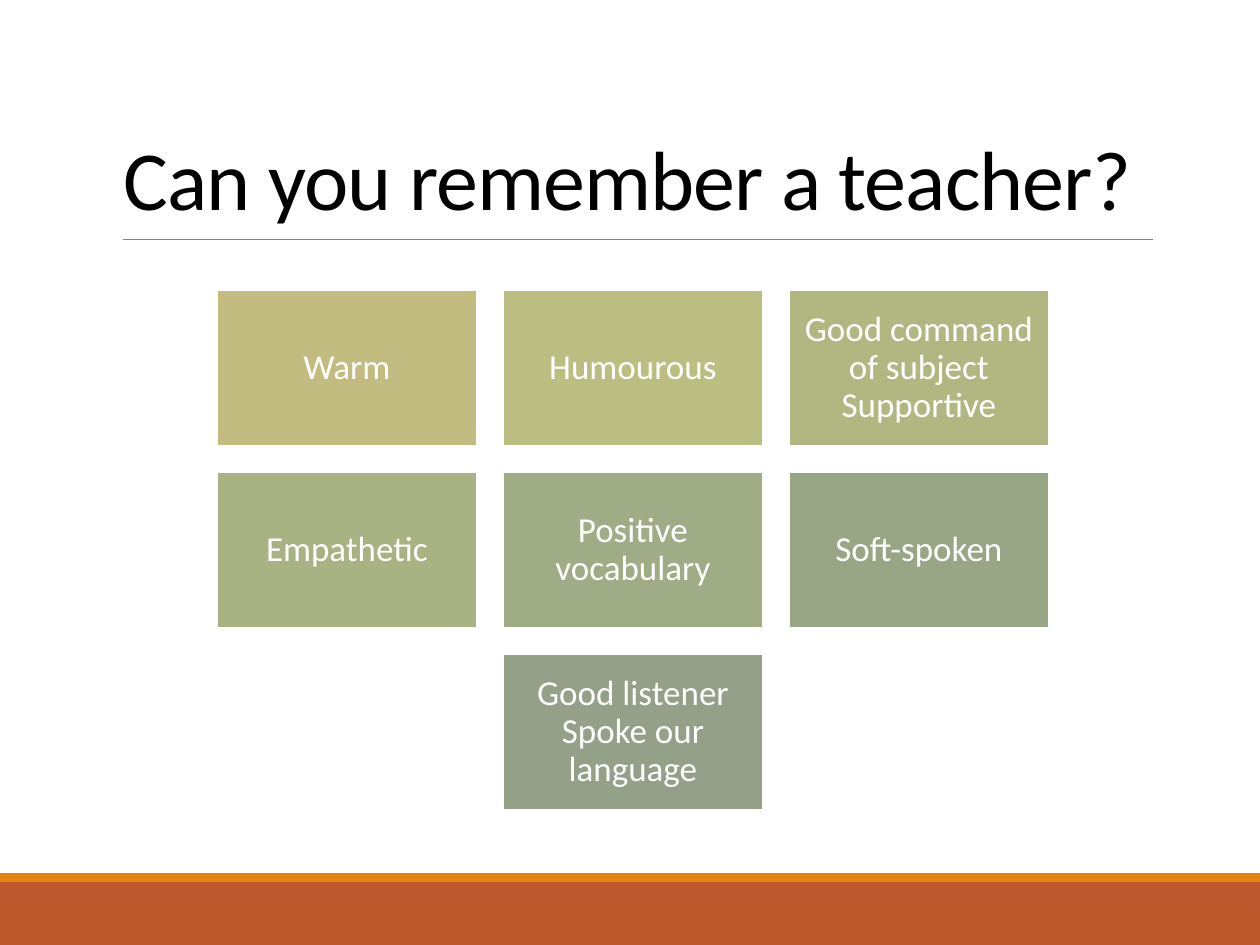
from lxml.etree import SubElement
from pptx import Presentation
from pptx.dml.color import RGBColor
from pptx.enum.shapes import MSO_CONNECTOR, MSO_SHAPE
from pptx.enum.text import MSO_ANCHOR, MSO_AUTO_SIZE, PP_ALIGN
from pptx.oxml.ns import qn
from pptx.util import Pt

FONT = "Calibri"
COLORS = {
    "rust": "BD582C",
    "amber": "E48312",
    "rule": "808080",
    "white": "FFFFFF",
    "black": "000000",
}
TRAITS = [
    ("Warm", "C2BC80", 0, 0),
    ("Humourous", "BCBD81", 0, 1),
    ("Good command of subject Supportive", "B2B782", 0, 2),
    ("Empathetic", "A8B283", 1, 0),
    ("Positive vocabulary", "A0AC85", 1, 1),
    ("Soft-spoken", "99A686", 1, 2),
    ("Good listener Spoke our language", "94A088", 2, 1),
]
LEFT, TOP = 123.8, 165.8
WIDE, HIGH = 149, 89.2
STEP_X, STEP_Y = 163.4, 104


def rgb(code):
    return RGBColor.from_string(code)


def add_text(frame, text, size, color, space):
    para = frame.paragraphs[0]
    para.line_spacing = space
    run = para.add_run()
    run.text = text
    run.font.name = FONT
    run.font.size = Pt(size)
    run.font.color.rgb = rgb(color)
    return para, run


def add_box(slide, left, top, width, height, fill):
    box = slide.shapes.add_shape(
        MSO_SHAPE.RECTANGLE, Pt(left), Pt(top), Pt(width), Pt(height)
    )
    box.shadow.inherit = False
    box.fill.solid()
    box.fill.fore_color.rgb = rgb(fill)
    box.line.fill.background()
    return box


def add_trait(slide, text, fill, row, col):
    box = add_box(
        slide, LEFT + col * STEP_X, TOP + row * STEP_Y, WIDE, HIGH, fill
    )
    box.line.color.rgb = rgb(COLORS["white"])
    box.line.width = Pt(1.25)
    frame = box.text_frame
    frame.word_wrap = True
    frame.vertical_anchor = MSO_ANCHOR.MIDDLE
    frame.margin_left = frame.margin_right = Pt(6)
    frame.margin_top = frame.margin_bottom = Pt(6)
    para, _ = add_text(frame, text, 20, COLORS["white"], 0.9)
    para.alignment = PP_ALIGN.CENTER
    para.space_after = Pt(7)


def add_rule(slide, left, right, y):
    rule = slide.shapes.add_connector(
        MSO_CONNECTOR.STRAIGHT, Pt(left), Pt(y), Pt(right), Pt(y)
    )
    rule.line.color.rgb = rgb(COLORS["rule"])
    rule.line.width = Pt(0.5)
    SubElement(rule._element.spPr, qn("a:effectLst"))


def set_title(slide, text):
    title = slide.shapes.title
    title.left, title.top = Pt(63.4), Pt(19.4)
    title.width, title.height = Pt(594), Pt(114.5)
    frame = title.text_frame
    frame.word_wrap = True
    frame.auto_size = MSO_AUTO_SIZE.NONE
    frame.vertical_anchor = MSO_ANCHOR.BOTTOM
    para, run = add_text(frame, text, 48, COLORS["black"], 0.85)
    para.alignment = PP_ALIGN.LEFT
    run._r.get_or_add_rPr().set("spc", "-50")


def main():
    deck = Presentation()
    deck.slide_width, deck.slide_height = Pt(720), Pt(540)
    slide = deck.slides.add_slide(deck.slide_layouts[5])
    add_box(slide, 0, 504, 720, 36, COLORS["rust"])
    add_box(slide, 0, 499, 720, 5, COLORS["amber"])
    add_rule(slide, 70.5, 659, 136.8)
    for trait in TRAITS:
        add_trait(slide, *trait)
    set_title(slide, "Can you remember a teacher?")
    deck.save("out.pptx")


if __name__ == "__main__":
    main()
